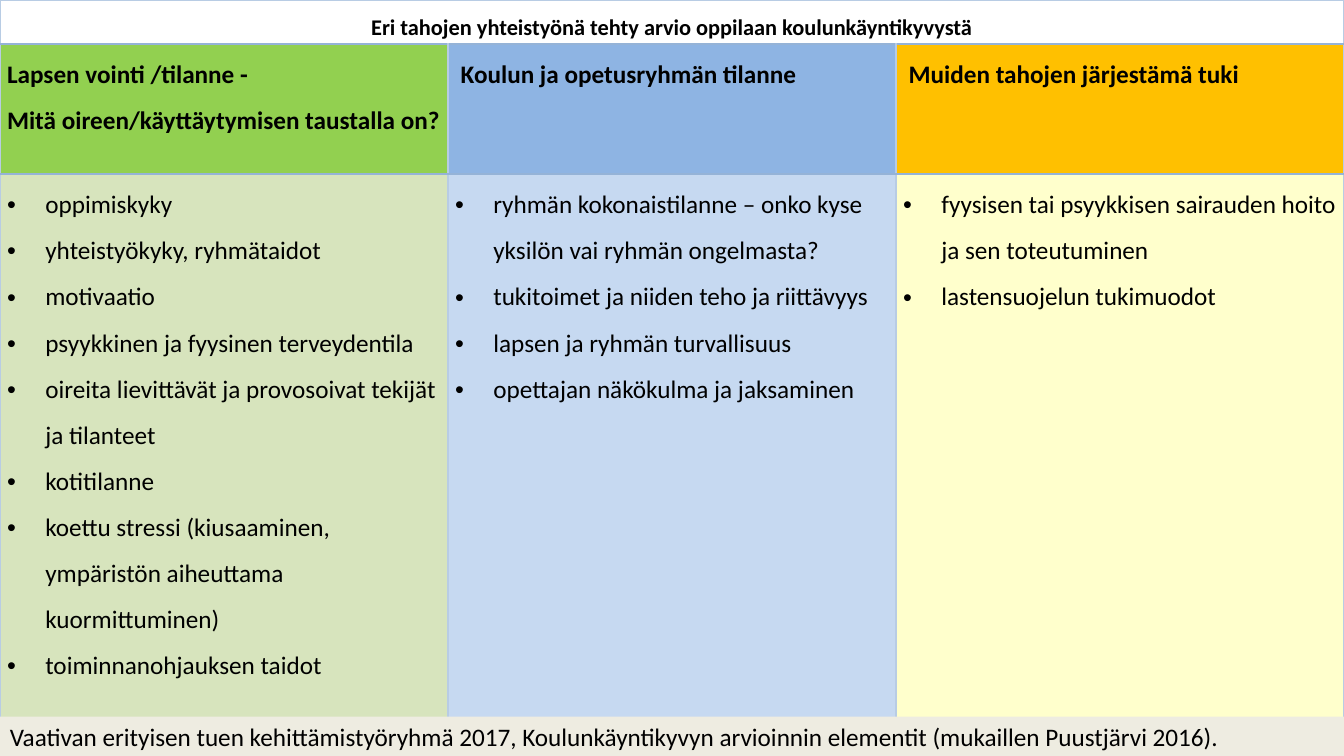
from lxml import etree
from pptx import Presentation
from pptx.dml.color import RGBColor
from pptx.enum.shapes import MSO_SHAPE
from pptx.enum.text import MSO_ANCHOR, PP_ALIGN
from pptx.oxml.ns import qn
from pptx.util import Inches, Pt

LEFT, CENTER, JUSTIFY = PP_ALIGN.LEFT, PP_ALIGN.CENTER, PP_ALIGN.JUSTIFY
TOP, MIDDLE = MSO_ANCHOR.TOP, MSO_ANCHOR.MIDDLE
RECTANGLE = MSO_SHAPE.RECTANGLE

COLORS = {
    "text": "000000",
    "title": "FFFFFF",
    "light_border": "B8CCE4",
    "dark_border": "95B3D7",
    "footer": "EEECE1",
}
WIDTH, HEIGHT = 13.33, 7.5
ROW_HEIGHTS = [0.44, 1.29, 5.86]
BULLET_INDENT = 0.38

TITLE = "Eri tahojen yhteistyönä tehty arvio oppilaan koulunkäyntikyvystä"
SOURCE = ("Vaativan erityisen tuen kehittämistyöryhmä 2017, Koulunkäyntikyvyn "
          "arvioinnin elementit (mukaillen Puustjärvi 2016).")
TOPICS = [
    {
        "heading": "Lapsen vointi /tilanne - \vMitä oireen/käyttäytymisen taustalla on?",
        "align": LEFT,
        "fills": ("92D050", "D7E4BD"),
        "points": [
            "oppimiskyky",
            "yhteistyökyky, ryhmätaidot",
            "motivaatio",
            "psyykkinen ja fyysinen terveydentila",
            "oireita lievittävät ja provosoivat tekijät ja tilanteet",
            "kotitilanne",
            "koettu stressi (kiusaaminen, ympäristön aiheuttama kuormittuminen)",
            "toiminnanohjauksen taidot",
        ],
    },
    {
        "heading": " Koulun ja opetusryhmän tilanne",
        "align": JUSTIFY,
        "fills": ("8EB4E3", "C6D9F1"),
        "points": [
            "ryhmän kokonaistilanne – onko kyse yksilön vai ryhmän ongelmasta?",
            "tukitoimet ja niiden teho ja riittävyys",
            "lapsen ja ryhmän turvallisuus",
            "opettajan näkökulma ja jaksaminen",
        ],
    },
    {
        "heading": " Muiden tahojen järjestämä tuki",
        "align": JUSTIFY,
        "fills": ("FFC000", "FFFFCC"),
        "points": [
            "fyysisen tai psyykkisen sairauden hoito ja sen toteutuminen",
            "lastensuojelun tukimuodot",
        ],
    },
]


def set_values(target, values):
    for name, value in values.items():
        setattr(target, name, value)


def set_fill(target, color):
    target.fill.solid()
    target.fill.fore_color.rgb = RGBColor.from_string(color)


def write_text(paragraph, text, size=18, bold=False, **paragraph_format):
    paragraph.text = text
    set_values(paragraph, paragraph_format)
    for run in paragraph.runs:
        set_values(run.font, {"name": "Calibri", "size": Pt(size), "bold": bold})
        run.font.color.rgb = RGBColor.from_string(COLORS["text"])


def add_bullet(paragraph):
    properties = paragraph._p.get_or_add_pPr()
    properties.set("marL", str(Inches(BULLET_INDENT)))
    properties.set("indent", str(-Inches(BULLET_INDENT)))
    etree.SubElement(properties, qn("a:buFont"), typeface="Arial")
    etree.SubElement(properties, qn("a:buChar"), char="•")


def set_borders(cell, top, bottom):
    properties = cell._tc.get_or_add_tcPr()
    edges = {"lnL": "light_border", "lnR": "light_border", "lnT": top, "lnB": bottom}
    for tag, color in edges.items():
        width = Pt(1.5) if color == "dark_border" else Pt(1)
        line = etree.SubElement(properties, qn(f"a:{tag}"), w=str(width))
        solid = etree.SubElement(line, qn("a:solidFill"))
        etree.SubElement(solid, qn("a:srgbClr"), val=COLORS[color])


def style_cell(cell, fill, top="dark_border", bottom="dark_border"):
    set_values(cell, {
        "margin_left": Inches(0.07), "margin_right": Inches(0.07),
        "margin_top": 0, "margin_bottom": 0, "vertical_anchor": TOP,
    })
    # Borders come before the fill in the cell properties
    set_borders(cell, top, bottom)
    set_fill(cell, fill)


def write_points(cell, points):
    frame = cell.text_frame
    for index, point in enumerate(points):
        paragraph = frame.add_paragraph() if index else frame.paragraphs[0]
        write_text(paragraph, point, line_spacing=1.5)
        add_bullet(paragraph)


def add_assessment_table(slide):
    table = slide.shapes.add_table(
        len(ROW_HEIGHTS), len(TOPICS), 0, 0,
        Inches(WIDTH), Inches(sum(ROW_HEIGHTS))).table
    for row, height in zip(table.rows, ROW_HEIGHTS):
        row.height = Inches(height)

    # Title across all columns
    title = table.cell(0, 0)
    title.merge(table.cell(0, len(TOPICS) - 1))
    for column in range(len(TOPICS)):
        style_cell(table.cell(0, column), COLORS["title"], top="light_border")
    write_text(title.text_frame.paragraphs[0], TITLE, size=16, bold=True,
               alignment=CENTER, line_spacing=1.5)

    # One column per topic
    for column, topic in enumerate(TOPICS):
        heading, body = table.cell(1, column), table.cell(2, column)
        heading_fill, body_fill = topic["fills"]
        style_cell(heading, heading_fill)
        write_text(heading.text_frame.paragraphs[0], topic["heading"], bold=True,
                   alignment=topic["align"], line_spacing=1.5)
        style_cell(body, body_fill, bottom="light_border")
        write_points(body, topic["points"])


def add_source_bar(slide):
    shape = slide.shapes.add_shape(
        RECTANGLE, 0, Inches(7.11), Inches(WIDTH), Inches(0.4))
    shape.shadow.inherit = False
    set_fill(shape, COLORS["footer"])
    shape.line.fill.background()
    set_values(shape.text_frame, {"word_wrap": True, "vertical_anchor": MIDDLE})
    write_text(shape.text_frame.paragraphs[0], SOURCE, alignment=LEFT)


def main():
    presentation = Presentation()
    set_values(presentation, {"slide_width": Inches(WIDTH), "slide_height": Inches(HEIGHT)})
    slide = presentation.slides.add_slide(presentation.slide_layouts[6])
    add_assessment_table(slide)
    add_source_bar(slide)
    presentation.save("out.pptx")


if __name__ == "__main__":
    main()
